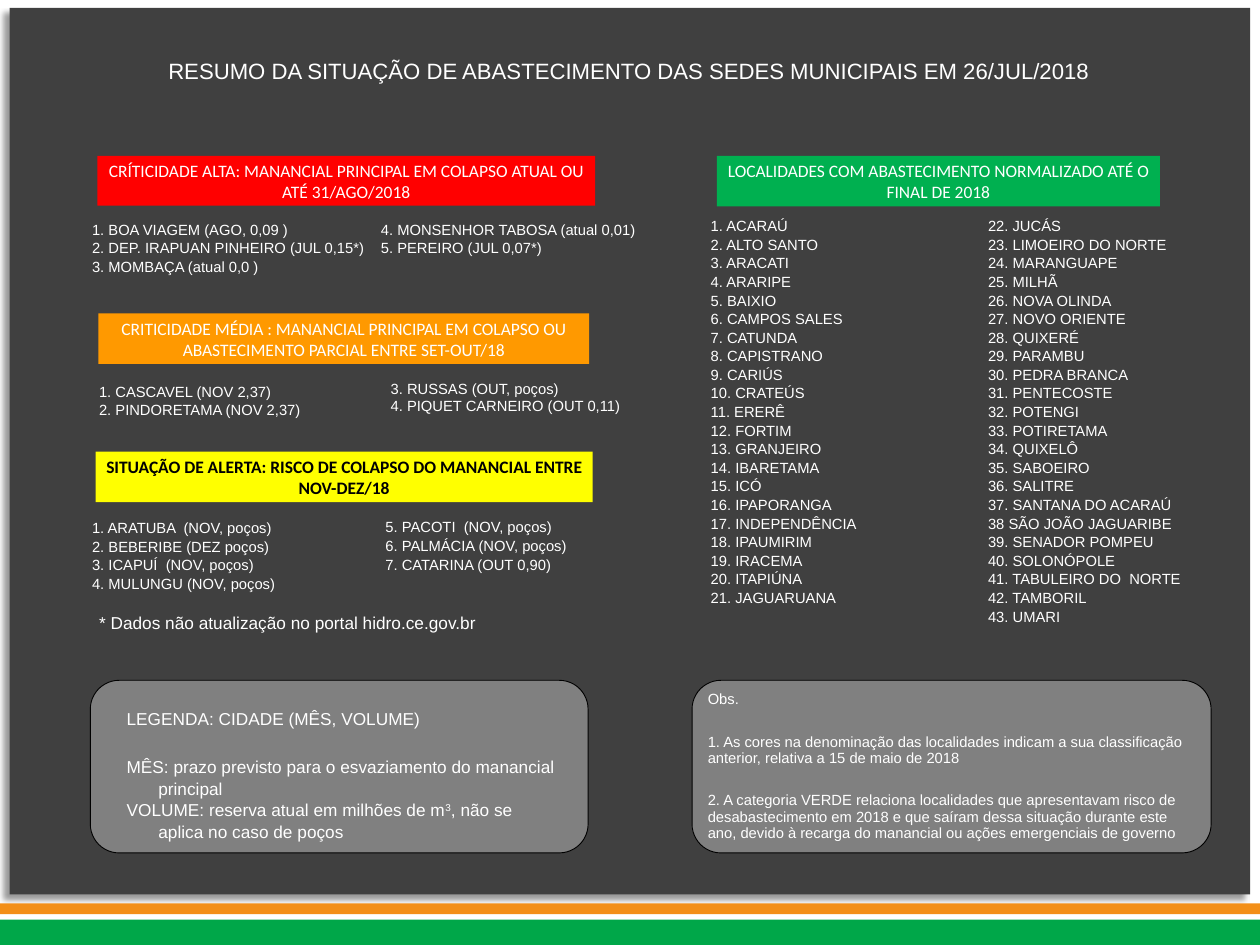
from lxml.etree import SubElement
from pptx import Presentation
from pptx.dml.color import RGBColor
from pptx.enum.shapes import MSO_SHAPE as Shape
from pptx.enum.text import MSO_ANCHOR as Anchor, MSO_AUTO_SIZE as AutoSize, PP_ALIGN as Align
from pptx.oxml.ns import qn
from pptx.util import Cm, Pt

COLORS = {
    "panel": "404040", "card": "808080", "white": "FFFFFF", "black": "000000",
    "high": "FF0000", "medium": "FF9900", "alert": "FFFF00", "normal": "00B050",
    "stripe_green": "00A749", "stripe_orange": "F38F18",
}
WIDTH, HEIGHT = 36.12, 27.1
TIGHT, LOOSE = 0.93, 1.05

HIGH_LEFT = ["1. BOA VIAGEM (AGO, 0,09 )", "2. DEP. IRAPUAN PINHEIRO (JUL 0,15*)",
             "3. MOMBAÇA (atual 0,0 )"]
HIGH_RIGHT = ["4. MONSENHOR TABOSA (atual 0,01)", "5. PEREIRO (JUL 0,07*)"]
MEDIUM_LEFT = ["1. CASCAVEL (NOV 2,37)", "2. PINDORETAMA (NOV 2,37)"]
MEDIUM_RIGHT = ["3. RUSSAS (OUT, poços)", "4. PIQUET CARNEIRO (OUT 0,11)"]
ALERT_LEFT = ["1. ARATUBA  (NOV, poços)", "2. BEBERIBE (DEZ poços)",
              "3. ICAPUÍ  (NOV, poços)", "4. MULUNGU (NOV, poços)"]
ALERT_RIGHT = ["5. PACOTI  (NOV, poços)", "6. PALMÁCIA (NOV, poços)",
               "7. CATARINA (OUT 0,90)"]
NORMAL_LEFT = [
    "1. ACARAÚ", "2. ALTO SANTO", "3. ARACATI", "4. ARARIPE", "5. BAIXIO",
    "6. CAMPOS SALES", "7. CATUNDA", "8. CAPISTRANO", "9. CARIÚS", "10. CRATEÚS",
    "11. ERERÊ", "12. FORTIM", "13. GRANJEIRO", "14. IBARETAMA", "15. ICÓ",
    "16. IPAPORANGA", "17. INDEPENDÊNCIA", "18. IPAUMIRIM", "19. IRACEMA",
    "20. ITAPIÚNA", "21. JAGUARUANA"]
NORMAL_RIGHT = [
    "22. JUCÁS", "23. LIMOEIRO DO NORTE", "24. MARANGUAPE", "25. MILHÃ",
    "26. NOVA OLINDA", "27. NOVO ORIENTE", "28. QUIXERÉ", "29. PARAMBU",
    "30. PEDRA BRANCA", "31. PENTECOSTE", "32. POTENGI", "33. POTIRETAMA",
    "34. QUIXELÔ", "35. SABOEIRO", "36. SALITRE", "37. SANTANA DO ACARAÚ",
    "38 SÃO JOÃO JAGUARIBE", "39. SENADOR POMPEU", "40. SOLONÓPOLE",
    "41. TABULEIRO DO  NORTE", "42. TAMBORIL", "43. UMARI"]
REMARKS = [
    "Obs.",
    "1. As cores na denominação das localidades indicam a sua classificação anterior, "
    "relativa a 15 de maio de 2018",
    "2. A categoria VERDE relaciona localidades que apresentavam risco de desabastecimento "
    "em 2018 e que saíram dessa situação durante este ano, devido à recarga do manancial "
    "ou ações emergenciais de governo"]
LEGEND = [
    "LEGENDA: CIDADE (MÊS, VOLUME)",
    "MÊS: prazo previsto para o esvaziamento do manancial principal",
    "VOLUME: reserva atual em milhões de m^3^, não se aplica no caso de poços"]


class SupplySlide:
    def __init__(self, deck, layout):
        self.slide = deck.slides.add_slide(layout)
        self.shapes = self.slide.shapes

    def fill_frame(self, frame, lines, size=12, font="Arial", color="white", bold=False,
                   align=Align.LEFT, anchor=Anchor.TOP, spacing=LOOSE, gaps=(), hanging=0):
        """Set the lines of a frame; gaps gives space before by line, ^ marks superscript."""
        frame.word_wrap = True
        frame.auto_size = AutoSize.NONE
        frame.vertical_anchor = anchor
        for number, line in enumerate(lines):
            para = frame.paragraphs[0] if number == 0 else frame.add_paragraph()
            para.alignment = align
            para.line_spacing = spacing
            para.space_before = Pt(gaps[number] if gaps else 0)
            properties = para._p.get_or_add_pPr()
            properties.set("marL", str(Cm(hanging)))
            properties.set("indent", str(-Cm(hanging)))
            SubElement(properties, qn("a:buNone"))
            para.font.name = font
            para.font.size = Pt(size)
            para.font.bold = bold
            para.font.color.rgb = RGBColor.from_string(COLORS[color])
            for position, part in enumerate(line.split("^")):
                span = para.add_run()
                span.text = part
                if position % 2:
                    span.font._element.set("baseline", "30000")

    def block(self, kind, area, fill, line=None):
        box = self.shapes.add_shape(kind, *map(Cm, area))
        box.shadow.inherit = False
        box.fill.solid()
        box.fill.fore_color.rgb = RGBColor.from_string(COLORS[fill])
        if line:
            box.line.color.rgb = RGBColor.from_string(COLORS[line])
            box.line.width = Pt(0.75)
        else:
            box.line.fill.background()
        return box

    def backdrop(self, area, fill):
        """Add a plain rectangle behind the placeholders."""
        box = self.block(Shape.RECTANGLE, area, fill)
        box._element.getparent().insert(2, box._element)
        return box

    def panel(self, area):
        effects = self.backdrop(area, "panel")._element.spPr.find(qn("a:effectLst"))
        shadow = SubElement(effects, qn("a:outerShdw"), blurRad=str(Pt(4)), dist=str(Pt(6)),
                            dir="8100000", algn="tr", rotWithShape="0")
        tint = SubElement(shadow, qn("a:srgbClr"), val=COLORS["black"])
        SubElement(tint, qn("a:alpha"), val="40000")

    def banner(self, area, fill, text, color="white", bold=False):
        box = self.block(Shape.RECTANGLE, area, fill)
        self.fill_frame(box.text_frame, [text], 14.2, "Calibri", color, bold,
                        Align.CENTER, Anchor.MIDDLE, 1.0)

    def card(self, area):
        self.block(Shape.ROUNDED_RECTANGLE, area, "card", "black")

    def text(self, area, lines, **style):
        box = self.shapes.add_textbox(*map(Cm, area))
        self.fill_frame(box.text_frame, lines, **style)

    def placeholder(self, index, area, lines, **style):
        box = self.slide.placeholders[index]
        box.left, box.top, box.width, box.height = map(Cm, area)
        self.fill_frame(box.text_frame, lines, **style)


def main():
    deck = Presentation()
    deck.slide_width, deck.slide_height = Cm(WIDTH), Cm(HEIGHT)
    page = SupplySlide(deck, deck.slide_layouts.get_by_name("Two Content"))

    page.backdrop((0, 26.37, WIDTH, 0.73), "stripe_green")
    page.backdrop((0, 25.91, WIDTH, 0.31), "stripe_orange")
    page.panel((0.28, 0.23, 35.56, 25.42))
    page.placeholder(
        0, (4.57, 1.6, 27.71, 1.02),
        ["RESUMO DA SITUAÇÃO DE ABASTECIMENTO DAS SEDES MUNICIPAIS EM 26/JUL/2018"],
        size=18, spacing=TIGHT)

    page.banner((2.79, 4.47, 14.27, 1.43), "high",
                "CRÍTICIDADE ALTA: MANANCIAL PRINCIPAL EM COLAPSO ATUAL OU ATÉ 31/AGO/2018")
    page.text((2.39, 6.17, 8.94, 2.2), HIGH_LEFT)
    page.text((10.67, 6.17, 9.17, 2.2), HIGH_RIGHT)

    page.banner((2.82, 8.99, 14.07, 1.45), "medium",
                "CRITICIDADE MÉDIA : MANANCIAL PRINCIPAL EM COLAPSO OU "
                "ABASTECIMENTO PARCIAL ENTRE SET-OUT/18")
    page.text((2.59, 10.82, 8.36, 1.8), MEDIUM_LEFT)
    page.text((10.95, 10.82, 8.43, 1.8), MEDIUM_RIGHT, spacing=TIGHT)

    page.banner((2.74, 12.95, 14.25, 1.45), "alert",
                "SITUAÇÃO DE ALERTA: RISCO DE COLAPSO DO MANANCIAL ENTRE NOV-DEZ/18",
                "black", True)
    page.text((2.39, 14.73, 7.9, 2.6), ALERT_LEFT)
    page.text((10.8, 14.71, 6.88, 2.6), ALERT_RIGHT)
    page.text((2.59, 17.5, 12.19, 1.02),
              ["* Dados não atualização no portal hidro.ce.gov.br"], size=14, spacing=TIGHT)

    page.banner((20.55, 4.47, 12.7, 1.45), "normal",
                "LOCALIDADES COM ABASTECIMENTO NORMALIZADO ATÉ O FINAL DE 2018")
    page.placeholder(1, (20.12, 6.07, 7.9, 11.91), NORMAL_LEFT)
    page.placeholder(2, (28.07, 6.07, 7.14, 11.91), NORMAL_RIGHT)

    page.card((2.59, 19.51, 14.27, 4.95))
    page.text((3.38, 20.17, 12.85, 3.81), LEGEND, size=14, gaps=(0, 21, 0), hanging=0.91)
    page.card((19.84, 19.51, 14.88, 4.95))
    page.text((20.04, 19.71, 14.61, 4.5), REMARKS, spacing=TIGHT, gaps=(0, 21, 21))

    deck.save("out.pptx")


if __name__ == "__main__":
    main()
